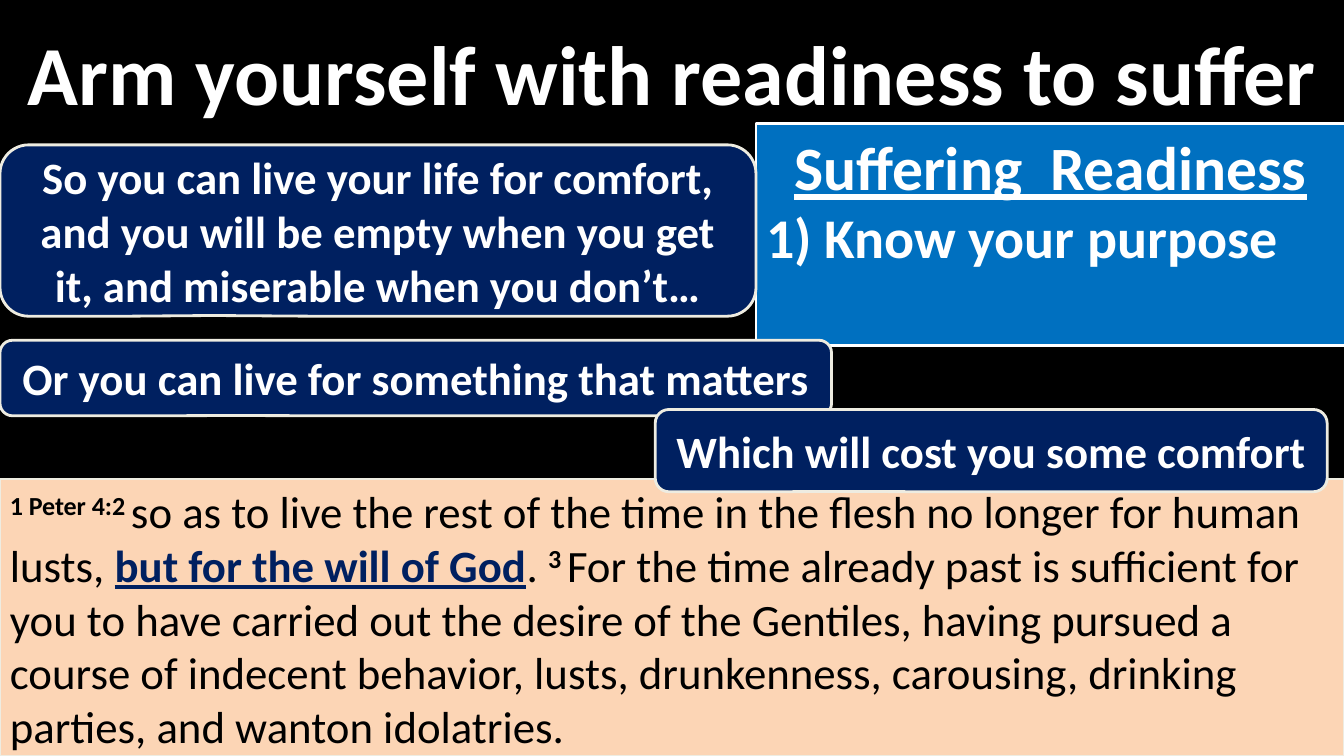
from lxml.etree import SubElement
from pptx import Presentation
from pptx.dml.color import RGBColor
from pptx.enum.shapes import MSO_SHAPE
from pptx.enum.text import MSO_ANCHOR, MSO_AUTO_SIZE, PP_ALIGN
from pptx.oxml.ns import qn
from pptx.util import Inches, Pt

BLACK = RGBColor(0x00, 0x00, 0x00)
WHITE = RGBColor(0xFF, 0xFF, 0xFF)
NAVY = RGBColor(0x00, 0x20, 0x60)
BLUE = RGBColor(0x00, 0x70, 0xC0)
PEACH = RGBColor(0xFC, 0xD5, 0xB5)
CREAM = RGBColor(0xEE, 0xEC, 0xE1)

COLUMNS, ROWS = 160, 90
WIDTH, HEIGHT = Inches(13.33), Inches(7.5)


def grid(column, row, columns, rows):
    return (int(WIDTH * column / COLUMNS), int(HEIGHT * row / ROWS),
            int(WIDTH * columns / COLUMNS), int(HEIGHT * rows / ROWS))


def place(shape, box):
    shape.left, shape.top, shape.width, shape.height = box


def paint(shape, fill, line, width):
    shape.fill.solid()
    shape.fill.fore_color.rgb = fill
    shape.line.color.rgb = line
    shape.line.width = Pt(width)


def prepare_text(shape, anchor, inset=0.1):
    frame = shape.text_frame
    frame.word_wrap = True
    frame.auto_size = MSO_AUTO_SIZE.NONE
    frame.vertical_anchor = anchor
    frame.margin_left = frame.margin_right = Inches(inset)
    return frame


def add_paragraph(frame, first, alignment):
    paragraph = frame.paragraphs[0] if first else frame.add_paragraph()
    paragraph.alignment = alignment
    paragraph.space_before = Pt(0)
    return paragraph


def add_run(paragraph, text, size, color, bold=True, underline=False, raised=False):
    run = paragraph.add_run()
    run.text = text
    font = run.font
    font.name = "Calibri"
    font.size = Pt(size)
    font.color.rgb = color
    font.bold = bold
    font.underline = underline
    if raised:
        run._r.get_or_add_rPr().set("baseline", "30000")


def fill_title(slide, box):
    title = slide.shapes.title
    place(title, box)
    frame = prepare_text(title, MSO_ANCHOR.MIDDLE)
    paragraph = add_paragraph(frame, True, PP_ALIGN.CENTER)
    add_run(paragraph, "Arm yourself with readiness to suffer", 60, WHITE)


def fill_readiness_list(slide, box):
    body = slide.placeholders[1]
    place(body, box)
    paint(body, BLUE, WHITE, 2)
    frame = prepare_text(body, MSO_ANCHOR.TOP)
    heading = add_paragraph(frame, True, PP_ALIGN.CENTER)
    add_run(heading, "Suffering  Readiness", 44, WHITE, underline=True)
    item = add_paragraph(frame, False, PP_ALIGN.LEFT)
    add_run(item, "1) Know your purpose", 40, WHITE)
    for paragraph in frame.paragraphs:
        properties = paragraph._p.get_or_add_pPr()
        properties.set("marL", "0")
        properties.set("indent", "0")
        SubElement(properties, qn("a:buNone"))


def add_verse(slide, box):
    verse = slide.shapes.add_shape(MSO_SHAPE.RECTANGLE, *box)
    verse.shadow.inherit = False
    paint(verse, PEACH, CREAM, 1.5)
    frame = prepare_text(verse, MSO_ANCHOR.TOP)
    paragraph = add_paragraph(frame, True, PP_ALIGN.LEFT)
    add_run(paragraph, "1 Peter 4:2 ", 32, BLACK, raised=True)
    add_run(paragraph, "so as to live the rest of the time in the flesh no longer "
            "for human lusts, ", 32, BLACK, bold=False)
    add_run(paragraph, "but for the will of God", 32, NAVY, underline=True)
    add_run(paragraph, ". ", 32, BLACK, bold=False)
    add_run(paragraph, "3 ", 32, BLACK, raised=True)
    add_run(paragraph, "For the time already past is sufficient for you to have "
            "carried out the desire of the Gentiles, having pursued a course of "
            "indecent behavior, lusts, drunkenness, carousing, drinking parties, "
            "and wanton idolatries.", 32, BLACK, bold=False)


def add_callout(slide, box, lines):
    callout = slide.shapes.add_shape(MSO_SHAPE.ROUNDED_RECTANGULAR_CALLOUT, *box)
    callout.shadow.inherit = False
    for index, value in enumerate((-0.219, 0.496, 0.167)):
        callout.adjustments[index] = value
    paint(callout, NAVY, CREAM, 2)
    frame = prepare_text(callout, MSO_ANCHOR.MIDDLE, inset=0.15)
    for index, line in enumerate(lines):
        paragraph = add_paragraph(frame, index == 0, PP_ALIGN.CENTER)
        add_run(paragraph, line, 32, WHITE)


def main():
    presentation = Presentation()
    presentation.slide_width, presentation.slide_height = WIDTH, HEIGHT
    slide = presentation.slides.add_slide(presentation.slide_layouts[1])
    slide.background.fill.solid()
    slide.background.fill.fore_color.rgb = BLACK

    fill_title(slide, grid(0, 3.5, 160, 10))
    fill_readiness_list(slide, grid(90, 14.75, 70.2, 26.4))
    add_verse(slide, grid(0, 57, 160, 33))
    add_callout(slide, grid(0, 40.5, 99, 9),
                ["Or you can live for something that matters"])
    add_callout(slide, grid(0, 17.25, 90, 20.4),
                ["So you can live your life for comfort,",
                 "and you will be empty when you get it, and miserable when you don’t…"])
    add_callout(slide, grid(78, 48.75, 80, 9.8),
                ["Which will cost you some comfort"])
    presentation.save("out.pptx")


if __name__ == "__main__":
    main()
